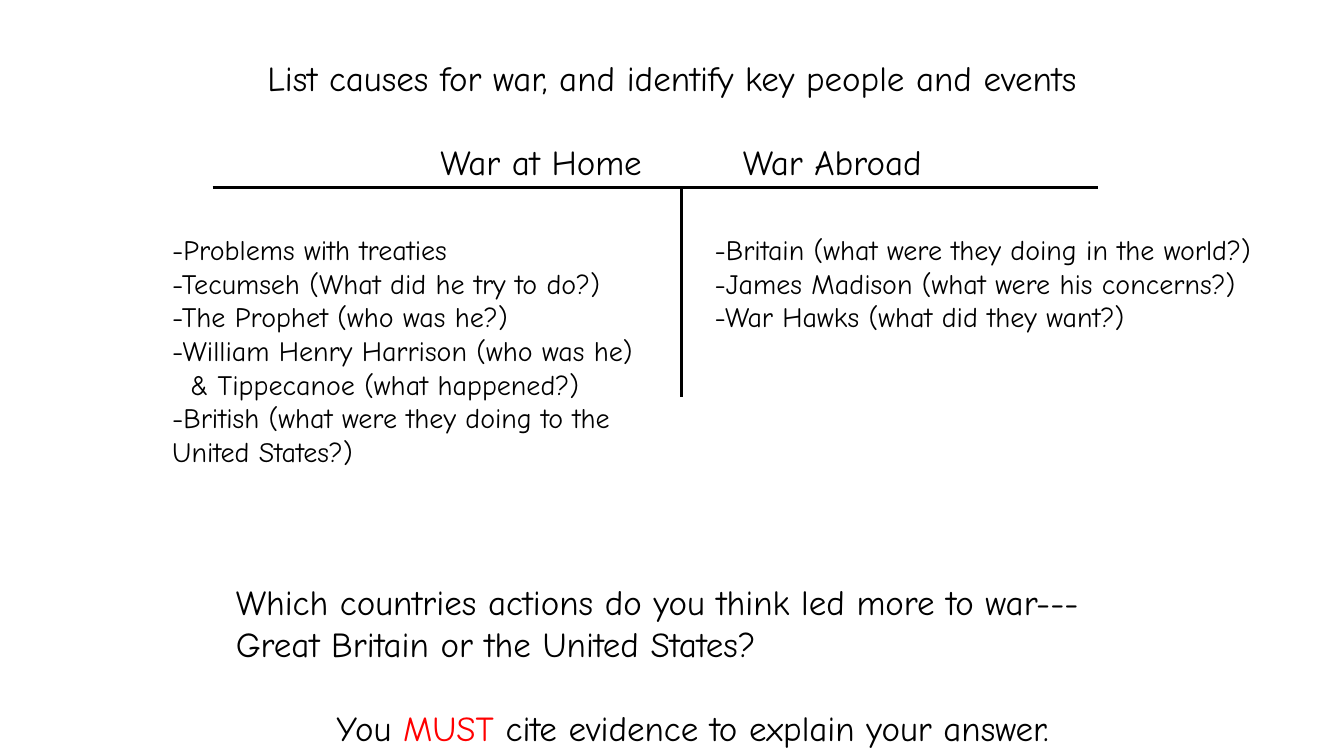
from dataclasses import dataclass

from lxml.etree import SubElement
from pptx import Presentation
from pptx.dml.color import RGBColor
from pptx.enum.shapes import MSO_CONNECTOR
from pptx.enum.text import MSO_AUTO_SIZE, PP_ALIGN
from pptx.oxml.ns import qn
from pptx.slide import Slide
from pptx.util import Inches, Length, Pt

COLUMNS, ROWS = 133.3, 75


@dataclass(frozen=True)
class Theme:
    font: str = "Comic Neue"
    ink: RGBColor = RGBColor(0, 0, 0)
    emphasis: RGBColor = RGBColor(255, 0, 0)
    heading_size: Length = Pt(25)
    list_size: Length = Pt(20)
    rule_width: Length = Pt(2.25)


THEME = Theme()


@dataclass(frozen=True)
class Line:
    """One paragraph; the emphasised word is drawn in its own colour."""
    text: str
    align: PP_ALIGN = PP_ALIGN.LEFT
    emphasised: str = ""
    indent: float = 0
    space_before: Length = Pt(0)


@dataclass(frozen=True)
class TextBlock:
    column: float
    row: float
    columns: float
    rows: float
    size: Length
    lines: tuple[Line, ...]


@dataclass(frozen=True)
class Rule:
    start_column: float
    start_row: float
    end_column: float
    end_row: float


CHART_TOP, CHART_STEM = 18.6, 67.6
RULES = (
    Rule(21.1, CHART_TOP, 108.9, CHART_TOP),
    Rule(CHART_STEM, CHART_TOP, CHART_STEM, 39.4),
)

TEXT_BLOCKS = (
    TextBlock(0, 5.1, COLUMNS, 5.2, THEME.heading_size, (
        Line("List causes for war, and identify key people and events", PP_ALIGN.CENTER),
    )),
    TextBlock(25, 13.4, 85.1, 5.2, THEME.heading_size, (
        Line("War at Home\t\t\tWar Abroad", PP_ALIGN.CENTER),
    )),
    TextBlock(16.1, 22.6, 52.6, 24.6, THEME.list_size, (
        Line("-Problems with treaties"),
        Line("-Tecumseh (What did he try to do?)"),
        Line("-The Prophet (who was he?)"),
        Line("-William Henry Harrison (who was he)"),
        Line("& Tippecanoe (what happened?)", indent=1.8),
        Line("-British (what were they doing to the United States?)"),
    )),
    TextBlock(69.9, 22.6, 63.4, 11.1, THEME.list_size, (
        Line("-Britain (what were they doing in the world?)"),
        Line("-James Madison (what were his concerns?)"),
        Line("-War Hawks (what did they want?)"),
    )),
    TextBlock(22.4, 57.1, 92.6, 17.8, THEME.heading_size, (
        Line("Which countries actions do you think led more to war---"
             "Great Britain or the United States?"),
        Line("You MUST cite evidence to explain your answer.", PP_ALIGN.CENTER,
             emphasised="MUST", space_before=Pt(30)),
    )),
)


def grid(cells: float) -> Length:
    """Length of a number of grid cells, each a tenth of an inch."""
    return Inches(cells / 10)


def add_rule(slide: Slide, rule: Rule) -> None:
    connector = slide.shapes.add_connector(
        MSO_CONNECTOR.STRAIGHT, grid(rule.start_column), grid(rule.start_row),
        grid(rule.end_column), grid(rule.end_row))
    connector.line.color.rgb = THEME.ink
    connector.line.width = THEME.rule_width
    SubElement(connector._element.spPr, qn("a:effectLst"))


def add_text_block(slide: Slide, block: TextBlock) -> None:
    frame = slide.shapes.add_textbox(
        grid(block.column), grid(block.row), grid(block.columns), grid(block.rows)).text_frame
    frame.word_wrap = True
    frame.auto_size = MSO_AUTO_SIZE.SHAPE_TO_FIT_TEXT
    for index, line in enumerate(block.lines):
        paragraph = frame.add_paragraph() if index else frame.paragraphs[0]
        paragraph.alignment = line.align
        paragraph.space_before = line.space_before
        paragraph.font.name = THEME.font
        paragraph.font.size = block.size
        paragraph.font.color.rgb = THEME.ink
        if line.indent:
            paragraph._p.get_or_add_pPr().set("marL", str(grid(line.indent)))
        parts = line.text.partition(line.emphasised) if line.emphasised else (line.text,)
        for part in parts:
            run = paragraph.add_run()
            run.text = part
            if part == line.emphasised:
                run.font.color.rgb = THEME.emphasis


def main() -> None:
    presentation = Presentation()
    presentation.slide_width = grid(COLUMNS)
    presentation.slide_height = grid(ROWS)
    slide = presentation.slides.add_slide(presentation.slide_layouts[6])
    for rule in RULES:
        add_rule(slide, rule)
    for block in TEXT_BLOCKS:
        add_text_block(slide, block)
    presentation.save("out.pptx")


if __name__ == "__main__":
    main()
